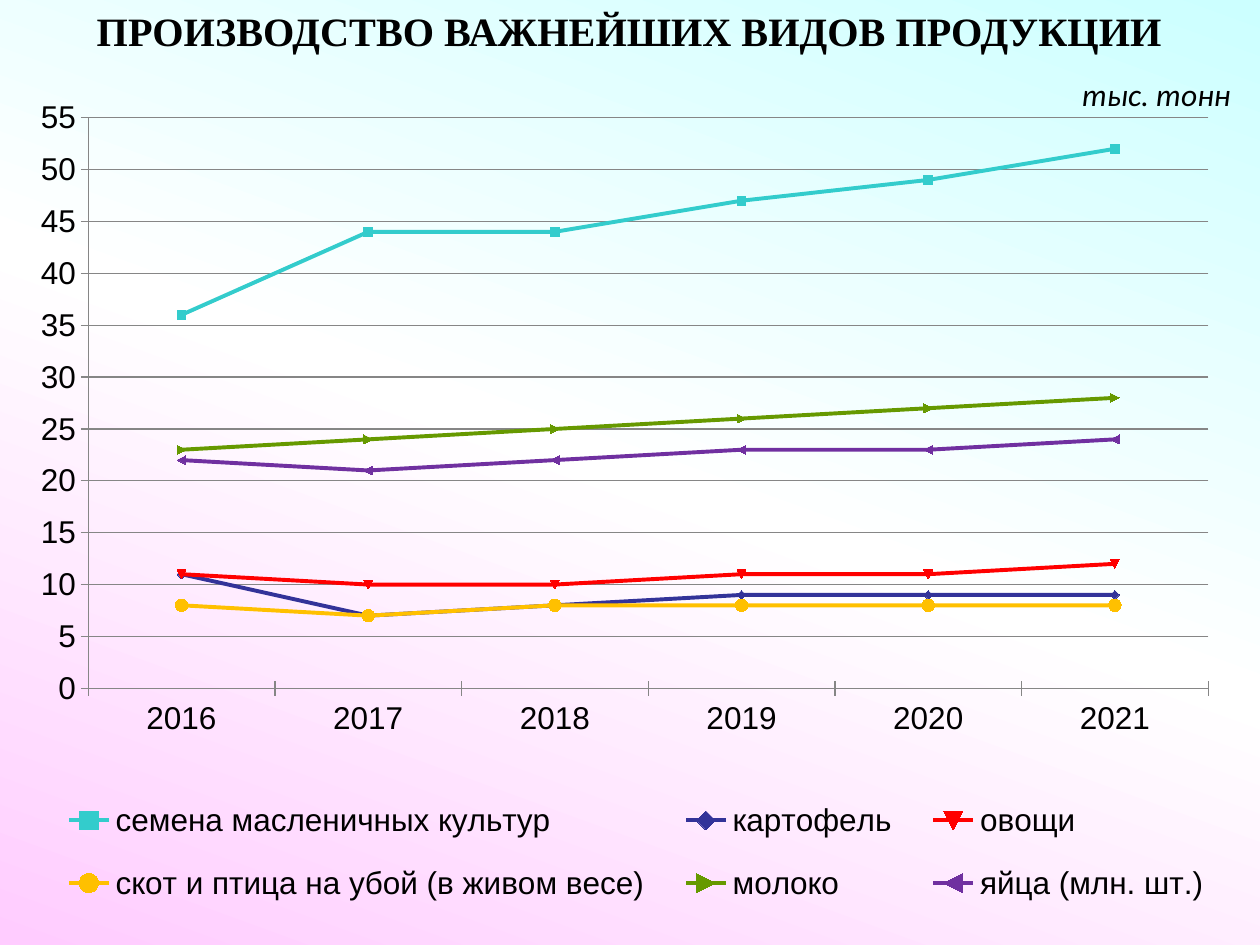
from copy import deepcopy

from pptx import Presentation
from pptx.chart.data import CategoryChartData
from pptx.dml.color import RGBColor
from pptx.enum.chart import (XL_CHART_TYPE, XL_LEGEND_POSITION,
                             XL_MARKER_STYLE, XL_TICK_MARK)
from pptx.enum.text import PP_ALIGN
from pptx.oxml import parse_xml
from pptx.oxml.ns import nsdecls, qn
from pptx.util import Inches, Pt

BLACK = RGBColor(0, 0, 0)
GREY = RGBColor(0x86, 0x86, 0x86)
BACKGROUND = [RGBColor(0xCC, 0xFF, 0xFF), RGBColor(0xFF, 0xFF, 0xFF),
              RGBColor(0xFF, 0xCC, 0xFF)]
LINE_MARKERS = XL_CHART_TYPE.LINE_MARKERS
RIGHT = XL_LEGEND_POSITION.RIGHT
CROSS = XL_TICK_MARK.CROSS
AUTO, CIRCLE = XL_MARKER_STYLE.AUTOMATIC, XL_MARKER_STYLE.CIRCLE
CENTER = PP_ALIGN.CENTER

YEARS = ["2016", "2017", "2018", "2019", "2020", "2021"]
# name, values, colour, marker style, marker size
PRODUCTS = [
    ("семена масленичных культур", (36, 44, 44, 47, 49, 52),
     RGBColor(0x33, 0xCC, 0xCC), AUTO, 5),
    ("картофель", (11, 7, 8, 9, 9, 9), RGBColor(0x33, 0x33, 0x99), AUTO, 5),
    ("овощи", (11, 10, 10, 11, 11, 12), RGBColor(0xFF, 0, 0), AUTO, 5),
    ("скот и птица на убой (в живом весе)", (8, 7, 8, 8, 8, 8),
     RGBColor(0xFF, 0xC0, 0), CIRCLE, 7),
    ("молоко", (23, 24, 25, 26, 27, 28), RGBColor(0x66, 0x99, 0), AUTO, 5),
    ("яйца (млн. шт.)", (22, 21, 22, 23, 23, 24),
     RGBColor(0x70, 0x30, 0xA0), AUTO, 5),
]


def add_text(slide, text, left, top, width, height, font_name, size):
    frame = slide.shapes.add_textbox(
        Inches(left), Inches(top), Inches(width), Inches(height)).text_frame
    frame.word_wrap = True
    paragraph = frame.paragraphs[0]
    paragraph.text = text
    paragraph.font.name = font_name
    paragraph.font.size = Pt(size)
    paragraph.font.color.rgb = BLACK
    return paragraph


def manual_layout(x, y, w, h, target=""):
    return parse_xml(
        f'<c:layout {nsdecls("c")}><c:manualLayout>{target}'
        '<c:xMode val="edge"/><c:yMode val="edge"/>'
        f'<c:x val="{x}"/><c:y val="{y}"/><c:w val="{w}"/><c:h val="{h}"/>'
        '</c:manualLayout></c:layout>')


prs = Presentation()
prs.slide_width, prs.slide_height = Inches(10), Inches(7.5)
slide = prs.slides.add_slide(prs.slide_layouts[6])

# Three-colour background gradient
background = slide.background.fill
background.gradient()
background.gradient_angle = 250
stop_list = slide._element.find(".//" + qn("a:gsLst"))
stop_list.append(deepcopy(stop_list[0]))
for i, (stop, color) in enumerate(zip(background.gradient_stops, BACKGROUND)):
    stop.color.rgb = color
    stop.position = i / 2

# Heading and unit
heading = add_text(slide, "ПРОИЗВОДСТВО ВАЖНЕЙШИХ ВИДОВ ПРОДУКЦИИ",
                   0, 0, 10, 0.62, "Times New Roman", 23)
heading.alignment = CENTER
heading.font.bold = True
unit = add_text(slide, "тыс. тонн", 8.49, 0.55, 1.51, 0.4, "Calibri", 18)
unit.font.italic = True

# Production chart
data = CategoryChartData()
data.categories = YEARS
for name, values, *_ in PRODUCTS:
    data.add_series(name, values)
chart = slide.shapes.add_chart(LINE_MARKERS, Inches(0), Inches(0.78),
                               Inches(10), Inches(6.72), data).chart
chart.has_title = False
chart.font.name = "Arial"
chart.font.size = Pt(18)
chart.font.color.rgb = BLACK
plot = chart.plots[0]
plot.vary_by_categories = False

for series, (_, _, color, style, size) in zip(plot.series, PRODUCTS):
    series.smooth = False
    series.format.line.color.rgb = color
    series.format.line.width = Pt(2.25)
    marker = series.marker
    marker.style = style
    marker.size = size
    marker.format.fill.solid()
    marker.format.fill.fore_color.rgb = color
    marker.format.line.color.rgb = color

# Axes and gridlines
for axis in (chart.category_axis, chart.value_axis):
    axis.major_tick_mark = CROSS
    axis.format.line.color.rgb = GREY
    axis.format.line.width = Pt(0.75)
scale = chart.value_axis
scale.minimum_scale, scale.maximum_scale, scale.major_unit = 0, 55, 5
scale.has_major_gridlines = True
scale.major_gridlines.format.line.color.rgb = GREY
scale.major_gridlines.format.line.width = Pt(0.75)

# Legend in two rows below the plot
chart.has_legend = True
legend = chart.legend
legend.position = RIGHT
legend.include_in_layout = False
legend_xml = legend._element
for old in legend_xml.findall(qn("c:layout")):
    legend_xml.remove(old)
legend_xml.find(qn("c:legendPos")).addnext(manual_layout(0.03, 0.8, 0.95, 0.18))

# Plot area position
plot_area = chart._chartSpace.find(".//" + qn("c:plotArea"))
for old in plot_area.findall(qn("c:layout")):
    plot_area.remove(old)
plot_area.insert(0, manual_layout(0.07, 0.023, 0.889, 0.674,
                                  '<c:layoutTarget val="inner"/>'))

prs.save("out.pptx")
